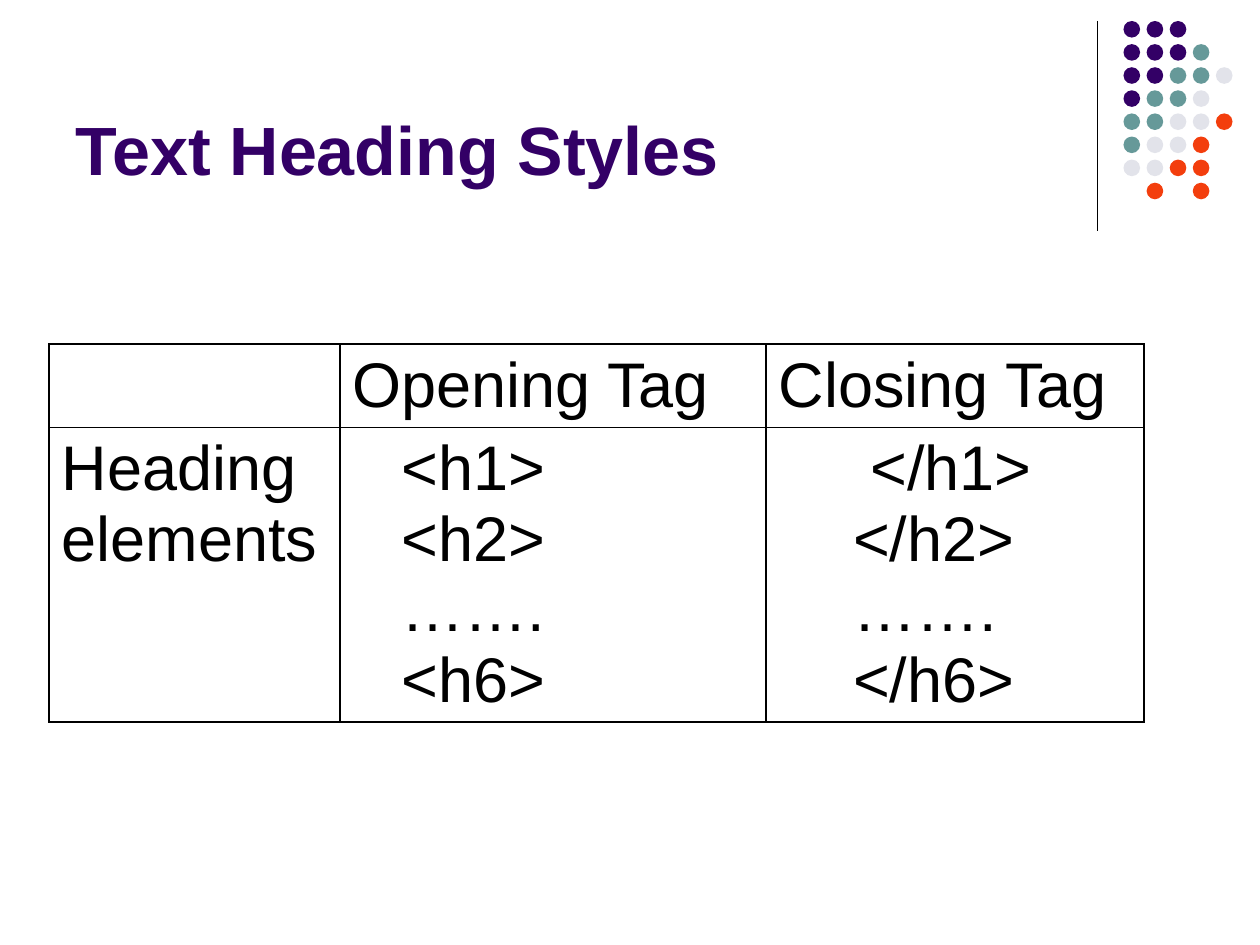
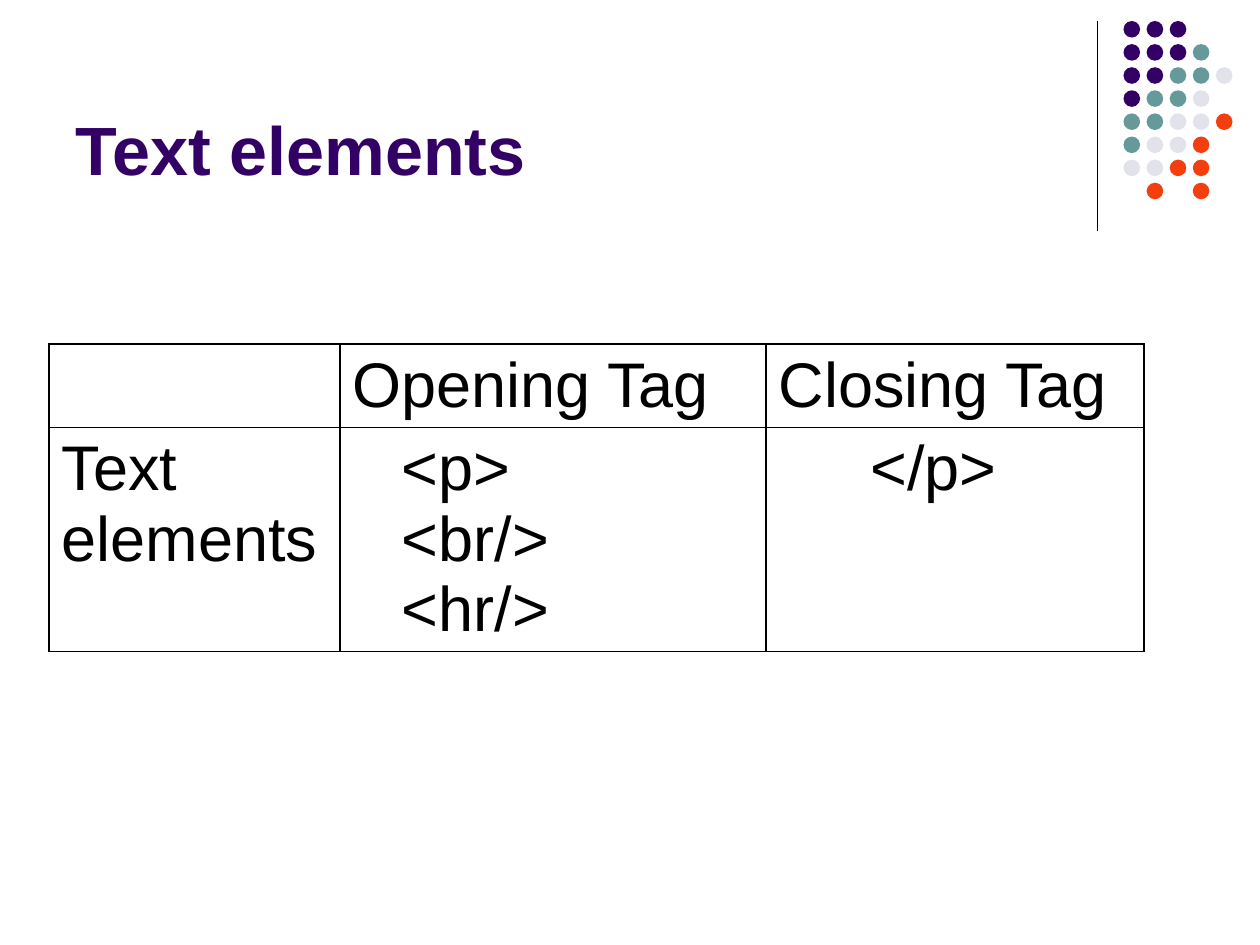
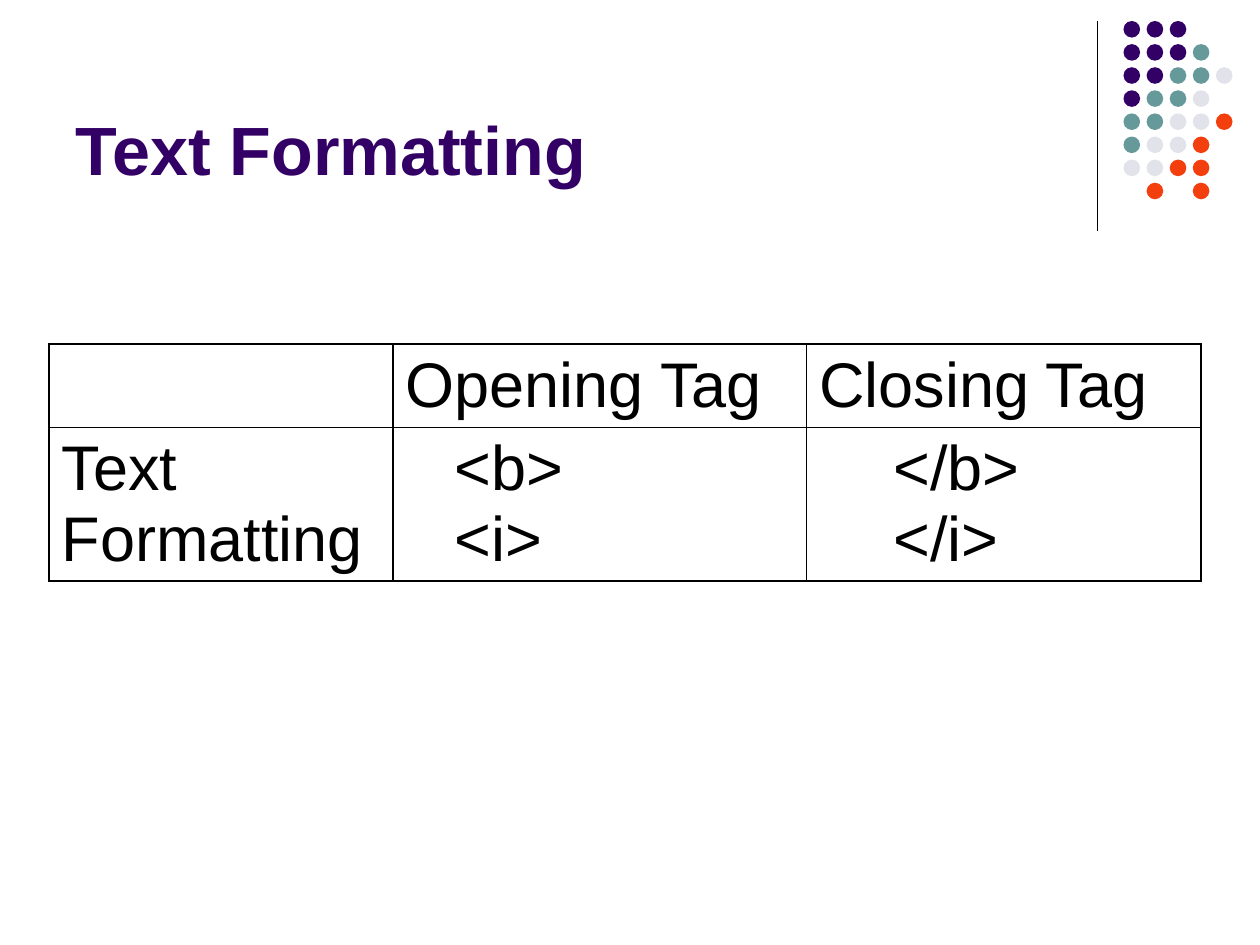
import pptx
import pptx.dml.color
import pptx.enum.shapes
import pptx.enum.text
import pptx.util
from lxml import etree

Pt = pptx.util.Pt
NS = "{http://schemas.openxmlformats.org/drawingml/2006/main}"
INK = "000000"
HUES = {"P": "330066", "T": "669999", "G": "E2E3EA", "R": "F33E0D"}
DOTS = ["PPP", "PPPT", "PPTTG", "PTTG", "TTGGR", "TGGR", "GGRR", " R R"]
PITCH, SIZE = 13.2, 9.5
LINE, PAD = 40.2, 7.2
HEAD = [[""], ["Opening Tag"], ["Closing Tag"]]
INDENT = [0, 28.1, 42.5]
SPACE = 10

SLIDES = [
    ("Text Heading Styles", [166.3, 243.4, 216], 4, {0},
     [["Heading elements"], ["<h1>", "<h2>", "…….", "<h6>"],
      ["</h1>", "</h2>", "…….", "</h6>"]]),
    ("Text elements", [166.3, 243.4, 216], 3, {0},
     [["Text", "elements"], ["<p>", "<br/>", "<hr/>"], ["</p>"]]),
    ("Text Formatting", [196.6, 236.2, 225.4], 2, set(),
     [["Text Formatting"], ["<b>", "<i>"], ["</b>", "</i>"]]),
]


def color(code):
    return pptx.dml.color.RGBColor.from_string(code)


def style(para, size, code, bold):
    para.font.name = "Arial"
    para.font.size = Pt(size)
    para.font.bold = bold
    para.font.color.rgb = color(code)


prs = pptx.Presentation()
prs.slide_width, prs.slide_height = Pt(720), Pt(540)

for name, widths, lines, shifted, body in SLIDES:
    slide = prs.slides.add_slide(prs.slide_layouts[5])
    shapes = slide.shapes

    rule = shapes.add_connector(
        pptx.enum.shapes.MSO_CONNECTOR.STRAIGHT, Pt(627), Pt(12), Pt(627), Pt(132))
    rule.line.color.rgb = color(INK)
    rule.line.width = Pt(0.75)
    etree.SubElement(rule._element.spPr, NS + "effectLst")

    group = shapes.add_group_shape()
    for row, marks in enumerate(DOTS):
        for col, mark in enumerate(marks):
            if mark == " ":
                continue
            dot = group.shapes.add_shape(
                pptx.enum.shapes.MSO_SHAPE.OVAL,
                Pt(642 + col * PITCH), Pt(12 + row * PITCH), Pt(SIZE), Pt(SIZE))
            dot.shadow.inherit = False
            dot.fill.solid()
            dot.fill.fore_color.rgb = color(HUES[mark])
            dot.line.fill.background()

    title = shapes.title
    title.left, title.top, title.width, title.height = Pt(36), Pt(9.4), Pt(594), Pt(102.2)
    title.text = name
    frame = title.text_frame
    frame.auto_size = pptx.enum.text.MSO_AUTO_SIZE.NONE
    frame.vertical_anchor = pptx.enum.text.MSO_ANCHOR.BOTTOM
    frame.paragraphs[0].alignment = pptx.enum.text.PP_ALIGN.LEFT
    style(frame.paragraphs[0], 39, HUES["P"], True)

    tall = [LINE + PAD, lines * LINE + PAD]
    table = shapes.add_table(
        2, 3, Pt(28.1), Pt(196.6), Pt(sum(widths)), Pt(sum(tall))).table
    table.first_row = table.horz_banding = False
    for col, width in enumerate(widths):
        table.columns[col].width = Pt(width)
    for row, texts in enumerate([HEAD, body]):
        table.rows[row].height = Pt(tall[row])
        for col, words in enumerate(texts):
            cell = table.cell(row, col)
            cell.text = "\n".join(words)
            for num, para in enumerate(cell.text_frame.paragraphs):
                if row and col:
                    inset = INDENT[col]
                    if col == 2 and num in shifted:
                        inset += SPACE
                    para._p.get_or_add_pPr().set("marL", str(Pt(inset)))
                style(para, 36, INK, False)
            props = cell._tc.get_or_add_tcPr()
            for side in "LRTB":
                edge = etree.SubElement(props, NS + "ln" + side, w=str(Pt(1)))
                fill = etree.SubElement(edge, NS + "solidFill")
                etree.SubElement(fill, NS + "srgbClr", val=INK)
            cell.fill.background()

prs.save("out.pptx")
